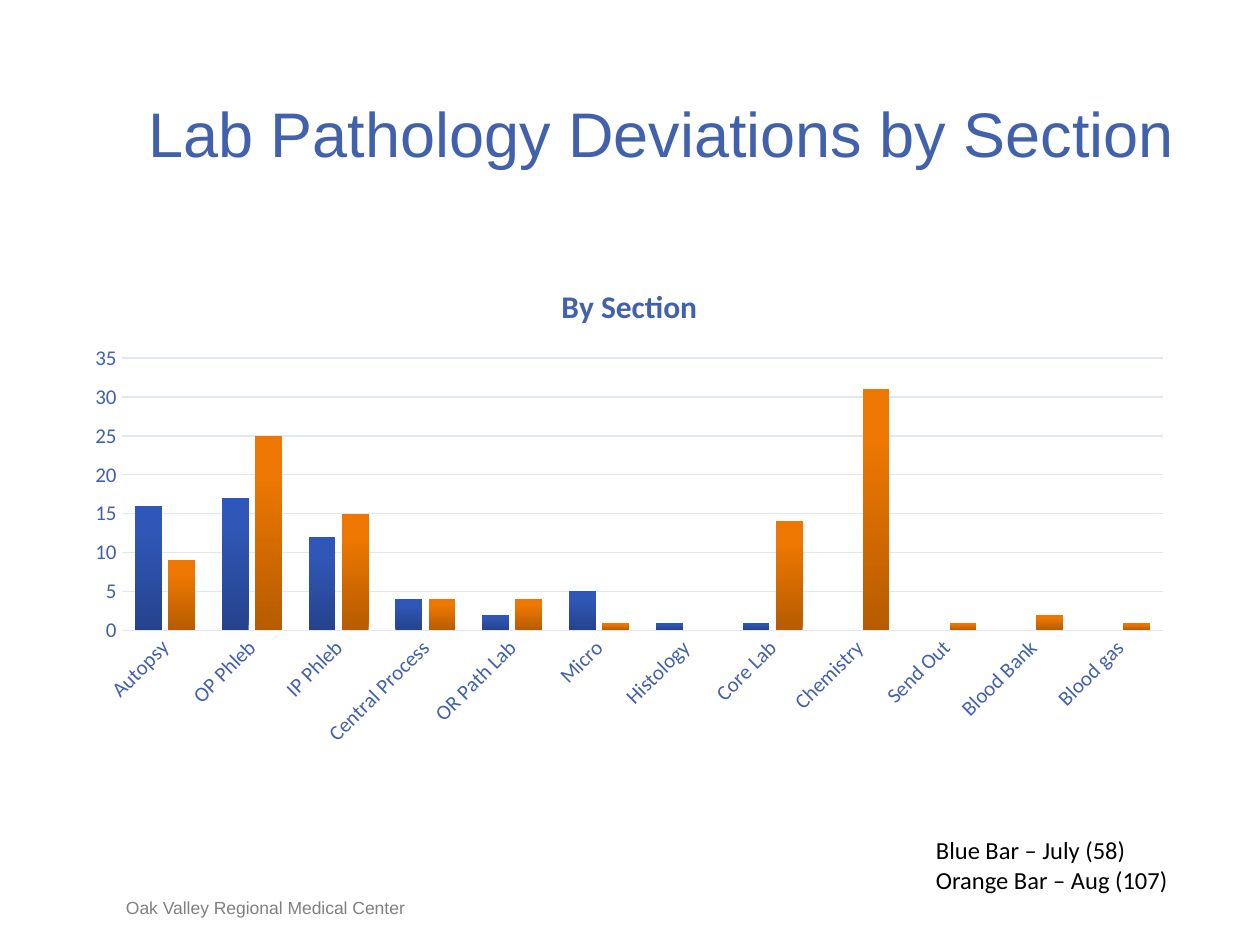
from lxml.etree import SubElement
from pptx import Presentation
from pptx.chart.data import CategoryChartData
from pptx.dml.color import RGBColor
from pptx.enum.chart import XL_CHART_TYPE as ChartType, XL_TICK_MARK as TickMark
from pptx.enum.text import MSO_ANCHOR as Anchor, PP_ALIGN as Align
from pptx.oxml.ns import qn
from pptx.util import Inches, Pt

BLUE = RGBColor(0x42, 0x61, 0xAD)
GRID = RGBColor(0xE2, 0xE7, 0xF4)
GRAY = RGBColor(0x80, 0x80, 0x80)
BLACK = RGBColor(0, 0, 0)
JULY_STOPS = [
    (0, RGBColor(0x25, 0x43, 0x8D)),
    (80, RGBColor(0x30, 0x57, 0xB7)),
    (100, RGBColor(0x2E, 0x57, 0xBB)),
]
AUGUST_STOPS = [
    (0, RGBColor(0xB7, 0x5C, 0x00)),
    (80, RGBColor(0xED, 0x77, 0x00)),
    (100, RGBColor(0xEE, 0x78, 0x00)),
]

deck = Presentation()
deck.slide_width = Inches(10)
deck.slide_height = Inches(7.5)
page = deck.slides.add_slide(deck.slide_layouts[6])


def add_text(text, left, top, width, height, size, color, font="Arial",
             align=Align.LEFT, anchor=Anchor.TOP, inset=(0, 0)):
    box = page.shapes.add_textbox(Inches(left), Inches(top), Inches(width), Inches(height))
    frame = box.text_frame
    frame.word_wrap = True
    frame.vertical_anchor = anchor
    frame.margin_left = frame.margin_right = Inches(inset[0])
    frame.margin_top = frame.margin_bottom = Inches(inset[1])
    frame.text = text
    for para in frame.paragraphs:
        para.alignment = align
        para.font.name = font
        para.font.size = Pt(size)
        para.font.color.rgb = color


add_text("Oak Valley Regional Medical Center", 1, 7.12, 3.17, 0.17, 10, GRAY,
         anchor=Anchor.BOTTOM)
add_text("Lab Pathology Deviations by Section", 1, 0.75, 8.5, 0.61, 36, BLUE,
         align=Align.CENTER)

data = CategoryChartData()
data.categories = ["Autopsy", "OP Phleb", "IP Phleb", "Central Process",
                   "OR Path Lab", "Micro", "Histology", "Core Lab",
                   "Chemistry", "Send Out", "Blood Bank", "Blood gas"]
data.add_series("Series 1", [16, 17, 12, 4, 2, 5, 1, 1, None, None, None, None])
data.add_series("Series 2", [9, 25, 15, 4, 4, 1, None, 14, 31, 1, 2, 1])
chart = page.shapes.add_chart(ChartType.COLUMN_CLUSTERED, Inches(0.58), Inches(2.08),
                              Inches(8.83), Inches(3.92), data).chart
chart.has_legend = False
chart.font.name = "Calibri"
chart.font.size = Pt(10)
chart.font.color.rgb = BLACK

chart.has_title = True
chart.chart_title.include_in_layout = False
chart.chart_title.text_frame.text = "By Section"
title_font = chart.chart_title.text_frame.paragraphs[0].runs[0].font
title_font.name = "Calibri"
title_font.size = Pt(18)
title_font.bold = True
title_font.color.rgb = BLUE

for axis in (chart.category_axis, chart.value_axis):
    axis.major_tick_mark = axis.minor_tick_mark = TickMark.NONE
    label_font = axis.tick_labels.font
    label_font.name = "Calibri"
    label_font.size = Pt(12)
    label_font.color.rgb = BLUE

category_line = chart.category_axis.format.line
grid_line = chart.value_axis.major_gridlines.format.line
for line in (category_line, grid_line):
    line.color.rgb = GRID
    line.width = Pt(0.75)
chart.value_axis.format.line.fill.background()
chart.value_axis.minimum_scale = 0
chart.value_axis.maximum_scale = 35
chart.value_axis.major_unit = 5
label_body = chart.category_axis._element.find(qn("c:txPr")).find(qn("a:bodyPr"))
label_body.set("rot", "-2700000")
label_body.set("vert", "horz")

plot = chart.plots[0]
plot.vary_by_categories = False
plot.gap_width = 100
plot.overlap = -24
for series, stops in zip(plot.series, (JULY_STOPS, AUGUST_STOPS)):
    fill = series.format.fill
    fill.gradient()
    fill.gradient_angle = 90
    stop_list = series._element.find(".//" + qn("a:gsLst"))
    stop_list.clear()
    for position, color in stops:
        stop = SubElement(stop_list, qn("a:gs"), pos=str(position * 1000))
        SubElement(stop, qn("a:srgbClr"), val=str(color))

add_text("Blue Bar – July (58)\nOrange Bar – Aug (107)", 7.33, 6.58, 2.06, 0.57, 14,
         BLACK, font="Calibri", inset=(0.1, 0.05))

deck.save("out.pptx")
